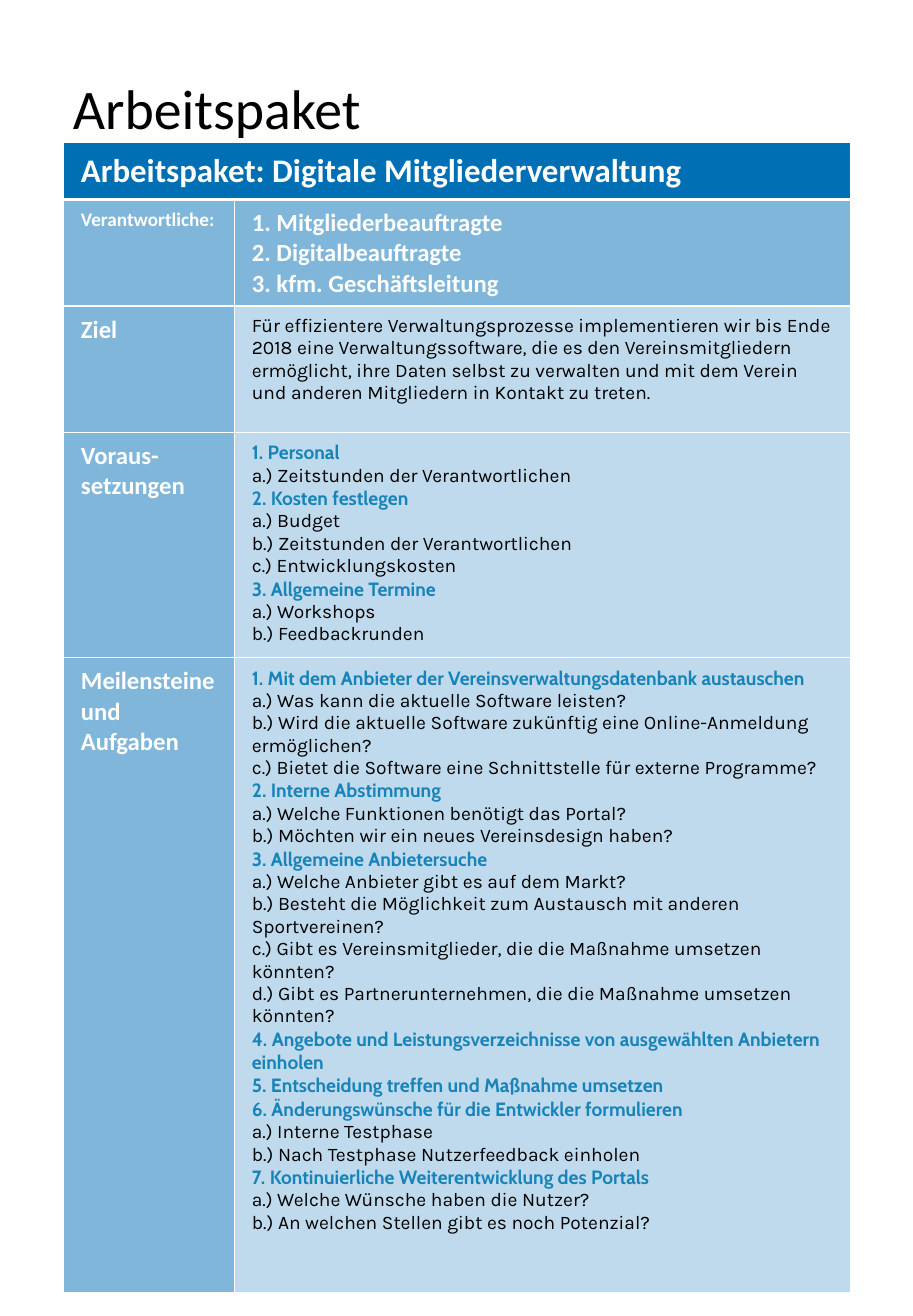
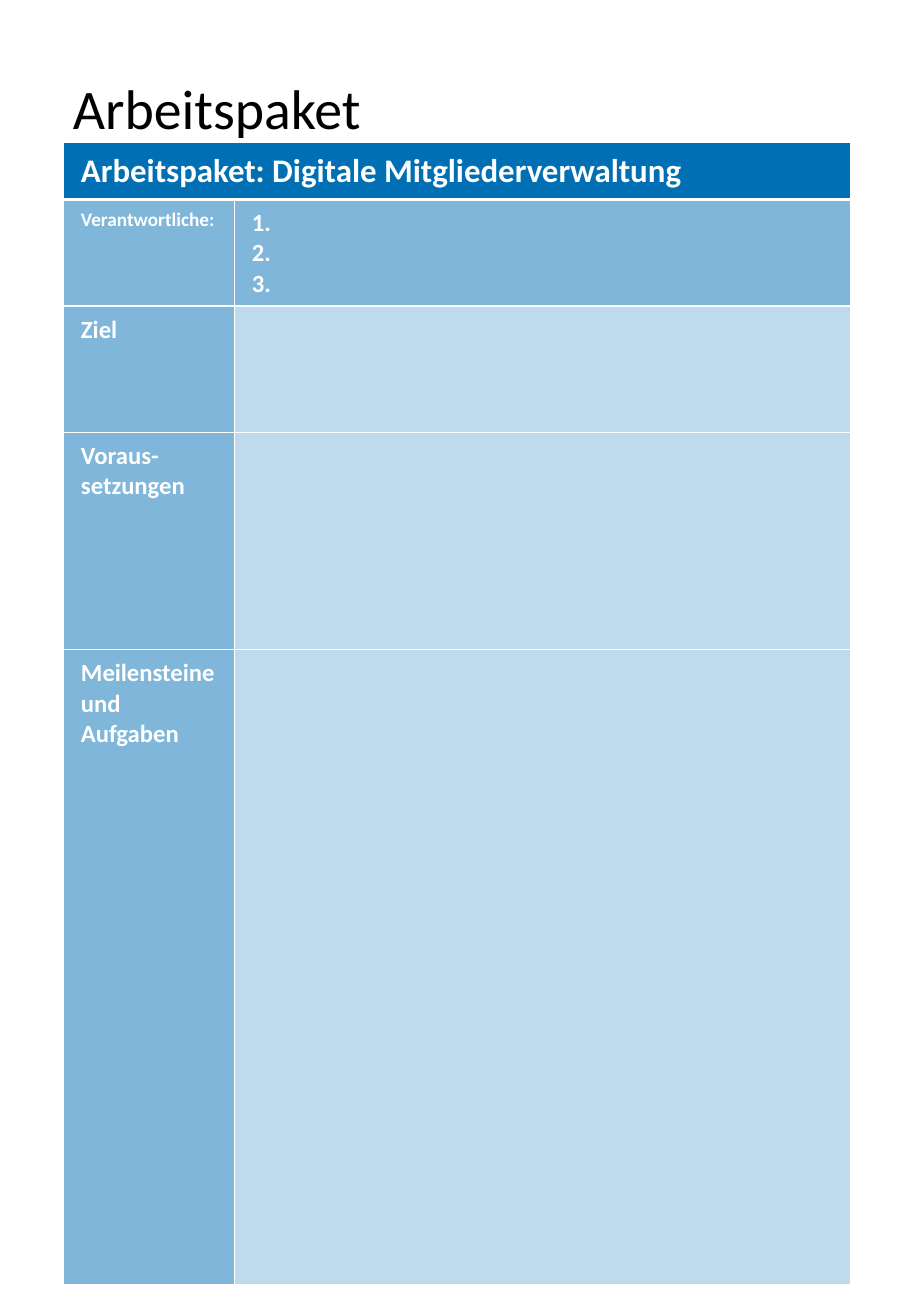
from dataclasses import dataclass

from lxml import etree
from pptx import Presentation
from pptx.dml.color import RGBColor
from pptx.enum.text import MSO_ANCHOR
from pptx.oxml.ns import qn
from pptx.util import Inches, Pt

MIDDLE = MSO_ANCHOR.MIDDLE


@dataclass(frozen=True)
class TextStyle:
    """Font, size in points, colour and weight of a paragraph."""
    font: str
    size: float
    color: str
    bold: bool = False


class Theme:
    """Colours, opacities, lines and text styles shared by the slides."""
    blue = "006FB4"
    white = "FFFFFF"
    opacity_header, opacity_label, opacity_body = 100, 50, 25
    thin, thick = 1, 3
    title = TextStyle("Calibri", 40.7, "000000")
    header = TextStyle("Calibri", 24, white, True)
    label = TextStyle("Calibri", 18, white, True)
    small_label = TextStyle("Calibri", 14, white, True)
    heading = TextStyle("Cabin", 14, "1783B8", True)
    body = TextStyle("Karla", 14, "000000")


WIDTH, HEIGHT = 9.25, 13.33
LEFT, CONTENT_WIDTH = 0.64, 7.98
TITLE_BOX = (LEFT, 0.71, CONTENT_WIDTH, 0.83)
TABLE_BOX = (LEFT, 1.44, CONTENT_WIDTH, 11.41)
LABEL_SHARE = 0.217
ROW_HEIGHTS = (0.46, 1.04, 1.28, 2.2, 6.43)
INSET_X, INSET_Y = 0.18, 0.09

TITLE = "Arbeitspaket"
HEADER = "Arbeitspaket: Digitale Mitgliederverwaltung"
LABELS = (
    ["Verantwortliche:"],
    ["Ziel"],
    ["Voraus-setzungen"],
    ["Meilensteine", "und", "Aufgaben"],
)
FILLED = (
    ["1. Mitgliederbeauftragte", "2. Digitalbeauftragte", "3. kfm. Geschäftsleitung"],
    ["Für effizientere Verwaltungsprozesse implementieren wir bis Ende 2018 eine "
     "Verwaltungssoftware, die es den Vereinsmitgliedern ermöglicht, ihre Daten selbst "
     "zu verwalten und mit dem Verein und anderen Mitgliedern in Kontakt zu treten."],
    ["1. Personal",
     "a.) Zeitstunden der Verantwortlichen",
     "2. Kosten festlegen",
     "a.) Budget",
     "b.) Zeitstunden der Verantwortlichen",
     "c.) Entwicklungskosten",
     "3. Allgemeine Termine",
     "a.) Workshops",
     "b.) Feedbackrunden"],
    ["1. Mit dem Anbieter der Vereinsverwaltungsdatenbank austauschen",
     "a.) Was kann die aktuelle Software leisten?",
     "b.) Wird die aktuelle Software zukünftig eine Online-Anmeldung ermöglichen?",
     "c.) Bietet die Software eine Schnittstelle für externe Programme?",
     "2. Interne Abstimmung",
     "a.) Welche Funktionen benötigt das Portal?",
     "b.) Möchten wir ein neues Vereinsdesign haben?",
     "3. Allgemeine Anbietersuche",
     "a.) Welche Anbieter gibt es auf dem Markt?",
     "b.) Besteht die Möglichkeit zum Austausch mit anderen Sportvereinen?",
     "c.) Gibt es Vereinsmitglieder, die die Maßnahme umsetzen könnten?",
     "d.) Gibt es Partnerunternehmen, die die Maßnahme umsetzen könnten?",
     "4. Angebote und Leistungsverzeichnisse von ausgewählten Anbietern einholen",
     "5. Entscheidung treffen und Maßnahme umsetzen",
     "6. Änderungswünsche für die Entwickler formulieren",
     "a.) Interne Testphase",
     "b.) Nach Testphase Nutzerfeedback einholen",
     "7. Kontinuierliche Weiterentwicklung des Portals",
     "a.) Welche Wünsche haben die Nutzer?",
     "b.) An welchen Stellen gibt es noch Potenzial?"],
)
TEMPLATE = (["1.", "2.", "3."], [], [], [])


def write_lines(tf, lines, style_of):
    """Write one paragraph per line, styled by style_of(line)."""
    for i, line in enumerate(lines):
        p = tf.paragraphs[0] if i == 0 else tf.add_paragraph()
        p.text = line
        style = style_of(line)
        p.font.name = style.font
        p.font.size = Pt(style.size)
        p.font.bold = style.bold
        p.font.color.rgb = RGBColor.from_string(style.color)


def entry_style(line):
    """Return the heading style for numbered lines, else the body style."""
    return Theme.heading if line[0].isdigit() else Theme.body


def set_borders(cell, top, bottom):
    """Draw white borders with the given top and bottom widths in points."""
    tc_pr = cell._tc.get_or_add_tcPr()
    widths = {"L": Theme.thin, "R": Theme.thin, "T": top, "B": bottom}
    for i, (side, width) in enumerate(widths.items()):
        ln = etree.Element(qn(f"a:ln{side}"), w=str(Pt(width)))
        fill = etree.SubElement(ln, qn("a:solidFill"))
        etree.SubElement(fill, qn("a:srgbClr"), val=Theme.white)
        tc_pr.insert(i, ln)


def format_cell(cell, opacity, top=Theme.thin, bottom=Theme.thin):
    """Set the insets, blue fill of the given opacity and borders of a cell."""
    cell.margin_left = cell.margin_right = Inches(INSET_X)
    cell.margin_top = cell.margin_bottom = Inches(INSET_Y)
    cell.fill.solid()
    cell.fill.fore_color.rgb = RGBColor.from_string(Theme.blue)
    if opacity < 100:
        color = cell._tc.tcPr.find(f".//{qn('a:srgbClr')}")
        etree.SubElement(color, qn("a:alpha"), val=str(opacity * 1000))
    set_borders(cell, top, bottom)


def add_title(s, box):
    """Add the slide title in the given box."""
    tf = s.shapes.add_textbox(*map(Inches, box)).text_frame
    tf.word_wrap = True
    tf.vertical_anchor = MIDDLE
    write_lines(tf, [TITLE], lambda line: Theme.title)
    tf.paragraphs[0].line_spacing = 0.9


def add_package_table(s, box, contents):
    """Add the work package table with one content list per label."""
    table = s.shapes.add_table(len(ROW_HEIGHTS), 2, *map(Inches, box)).table
    table.first_row = table.horz_banding = False
    for column, share in zip(table.columns, (LABEL_SHARE, 1 - LABEL_SHARE)):
        column.width = Inches(box[2] * share)
    for row, height in zip(table.rows, ROW_HEIGHTS):
        row.height = Inches(box[3] * height / sum(ROW_HEIGHTS))

    for cell in table.rows[0].cells:
        format_cell(cell, Theme.opacity_header, bottom=Theme.thick)
    header = table.cell(0, 0)
    header.merge(table.cell(0, 1))
    write_lines(header.text_frame, [HEADER], lambda line: Theme.header)

    for i, (label, lines) in enumerate(zip(LABELS, contents), start=1):
        is_lead = i == 1
        top = Theme.thick if is_lead else Theme.thin
        label_style = Theme.small_label if is_lead else Theme.label
        label_cell, content_cell = table.cell(i, 0), table.cell(i, 1)
        format_cell(label_cell, Theme.opacity_label, top)
        format_cell(content_cell, Theme.opacity_label if is_lead else Theme.opacity_body, top)
        write_lines(label_cell.text_frame, label, lambda line: label_style)
        write_lines(content_cell.text_frame, lines,
                    (lambda line: Theme.label) if is_lead else entry_style)


def add_package_slide(prs, contents):
    """Add a slide with the title and the work package table."""
    s = prs.slides.add_slide(prs.slide_layouts[6])
    add_title(s, TITLE_BOX)
    add_package_table(s, TABLE_BOX, contents)


def main():
    """Build and save the presentation."""
    prs = Presentation()
    prs.slide_width, prs.slide_height = Inches(WIDTH), Inches(HEIGHT)
    for contents in (FILLED, TEMPLATE):
        add_package_slide(prs, contents)
    prs.save("out.pptx")


if __name__ == "__main__":
    main()
